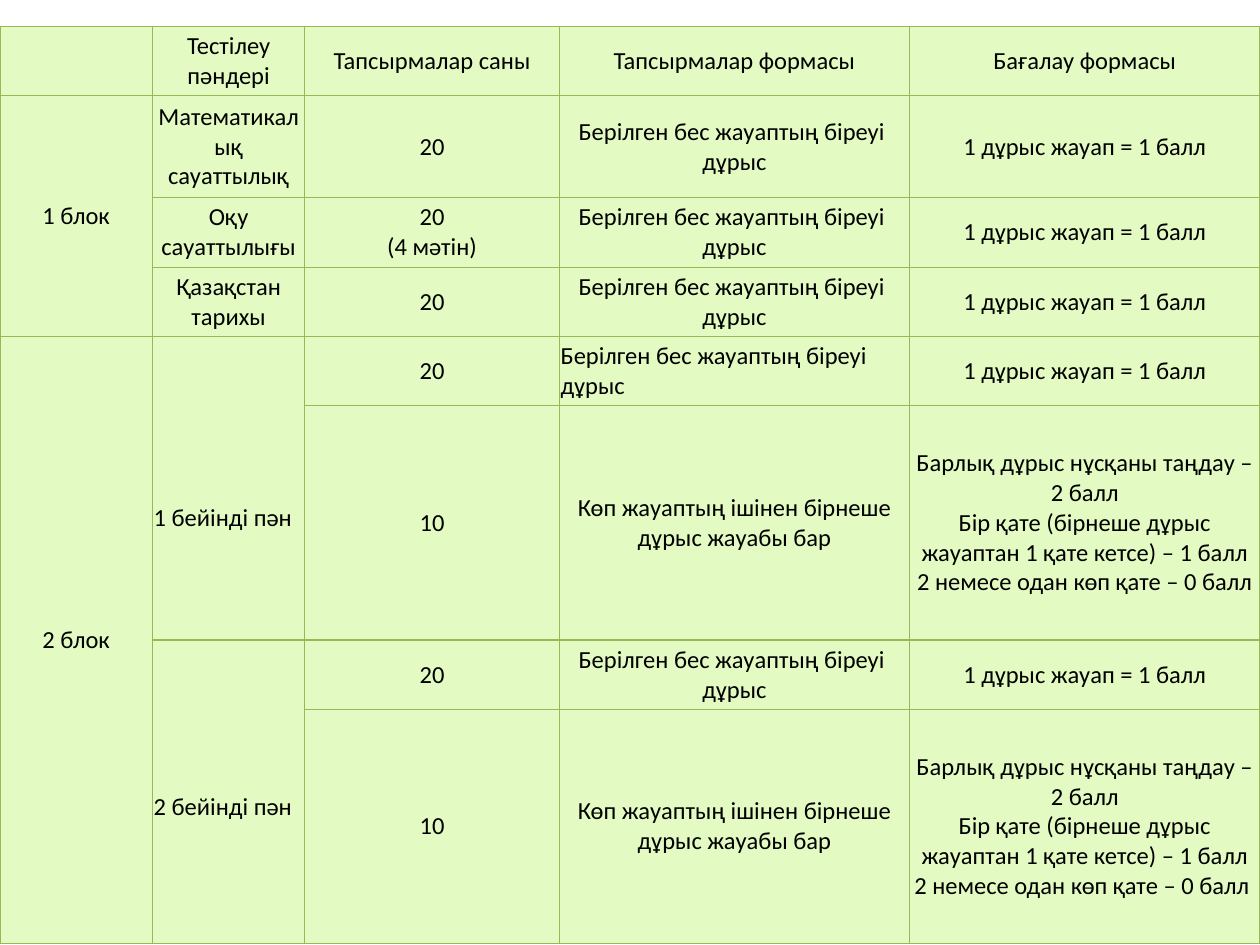
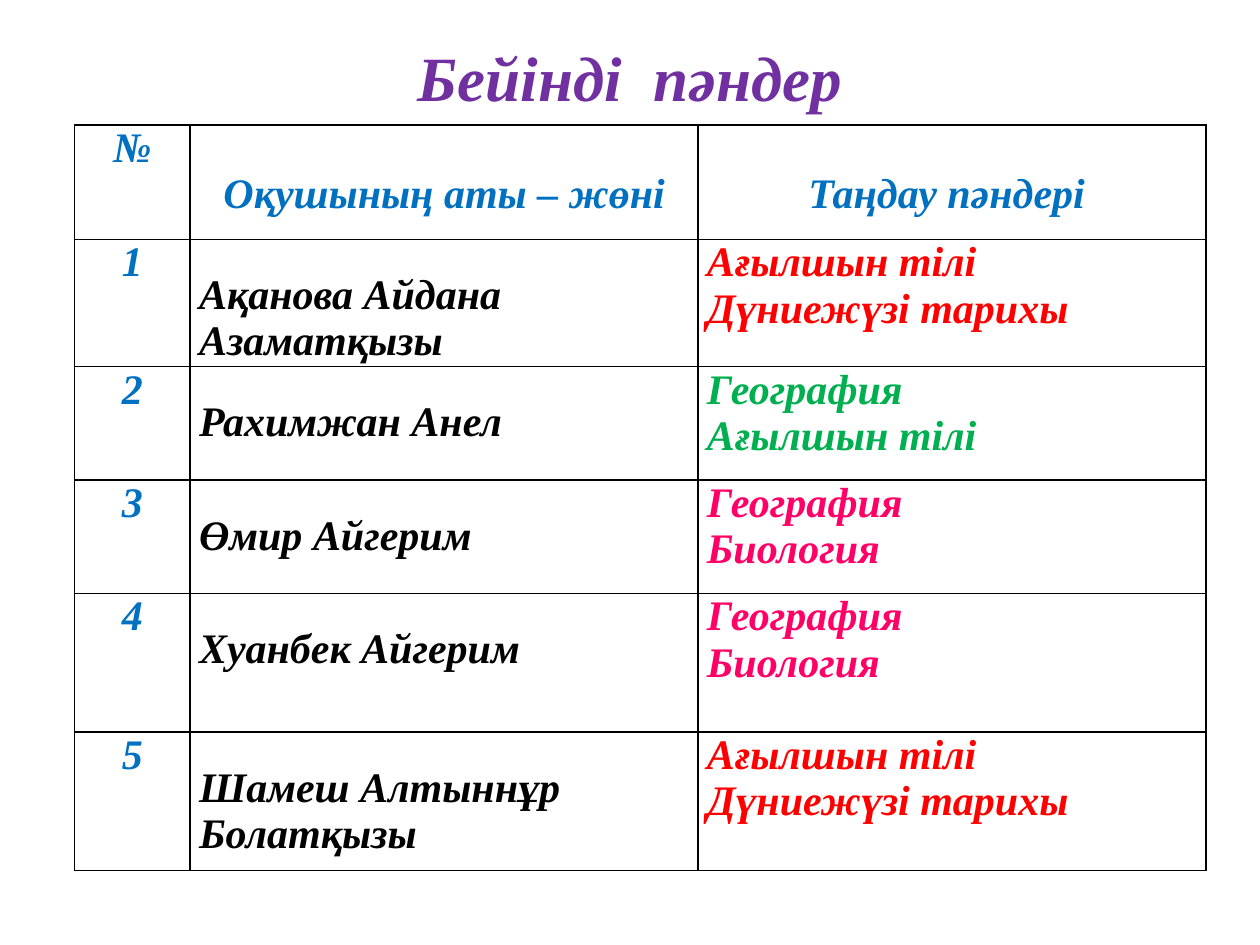
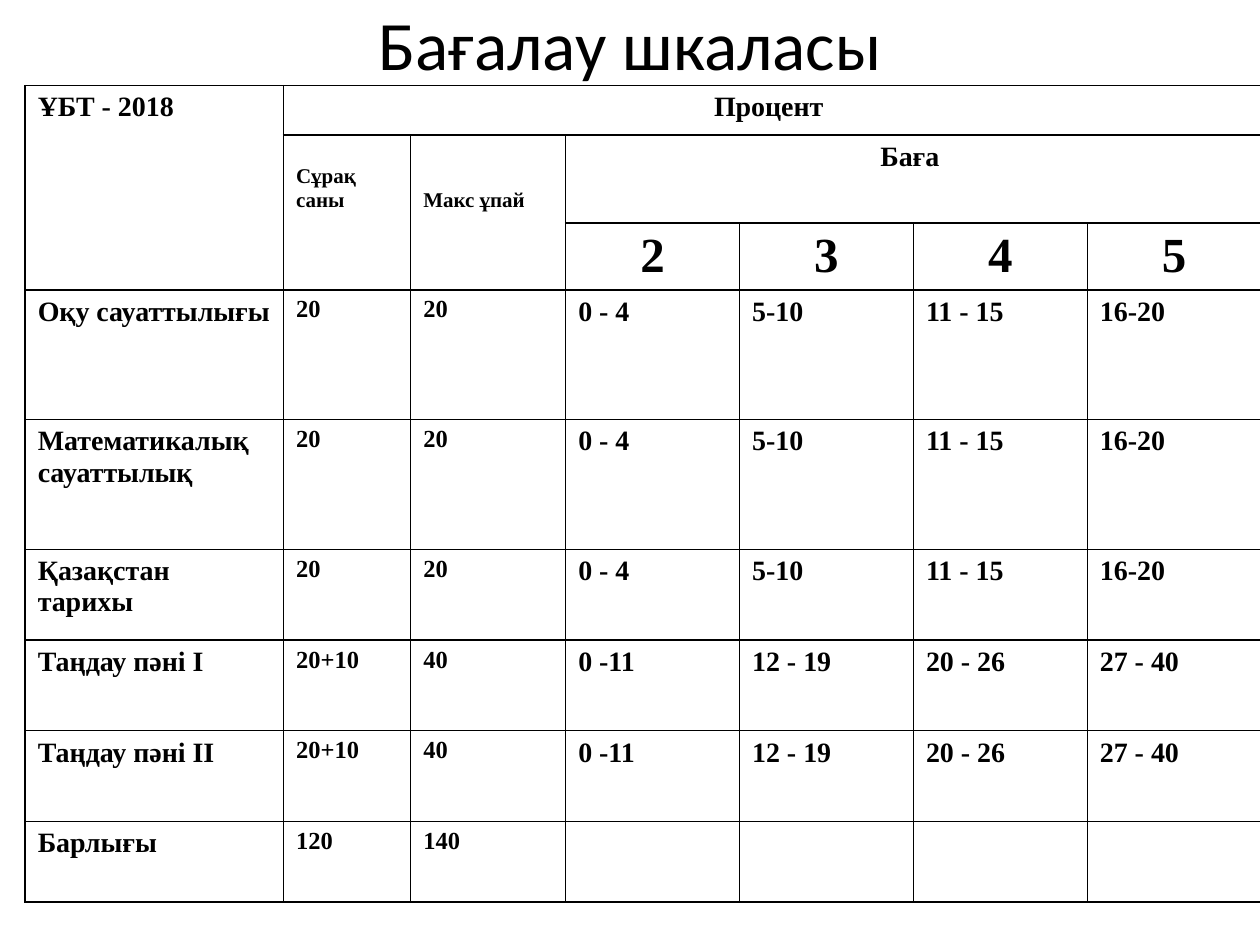
from dataclasses import dataclass, replace

from lxml.etree import SubElement
from pptx import Presentation
from pptx.dml.color import RGBColor
from pptx.enum.text import MSO_ANCHOR, MSO_AUTO_SIZE, PP_ALIGN
from pptx.oxml.ns import qn
from pptx.slide import Slide
from pptx.table import _Cell
from pptx.text.text import TextFrame
from pptx.util import Inches, Pt

HUES = {
    "black": "000000", "blue": "0070C0", "violet": "7030A0", "red": "FF0000",
    "green": "00B050", "pink": "FF0066", "lime": "E3FBC2", "olive": "98B955",
}


@dataclass(frozen=True)
class Look:
    font: str
    size: float
    hue: str = "black"
    bold: bool = False
    slant: bool = False
    center: bool = False


@dataclass(frozen=True)
class Item:
    """Cell text, one paragraph a line; top replaces the top inset."""
    text: str
    look: Look
    span: tuple[int, int] = (1, 1)
    top: float | None = None


@dataclass(frozen=True)
class Grid:
    left: float
    top: float
    cols: list[float]
    rows: list[float]
    inset: tuple[float, float]
    line: str = "black"
    weight: float = 1
    fill: str | None = None
    anchor: MSO_ANCHOR = MSO_ANCHOR.TOP


Rows = list[list[Item | None]]


def write(frame: TextFrame, text: str, look: Look) -> None:
    for num, line in enumerate(text.split("\n")):
        para = frame.add_paragraph() if num else frame.paragraphs[0]
        para.alignment = PP_ALIGN.CENTER if look.center else PP_ALIGN.LEFT
        run = para.add_run()
        run.text = line
        font = run.font
        font.name, font.size = look.font, Pt(look.size)
        font.bold, font.italic = look.bold, look.slant
        font.color.rgb = RGBColor.from_string(HUES[look.hue])


def add_title(slide: Slide, text: str, top: float, height: float, look: Look) -> None:
    title = slide.shapes.title
    title.left, title.top = Inches(0.5), Inches(top)
    title.width, title.height = Inches(9), Inches(height)
    frame = title.text_frame
    frame.auto_size = MSO_AUTO_SIZE.NONE
    frame.vertical_anchor = MSO_ANCHOR.MIDDLE
    write(frame, text, look)


def format_cell(cell: _Cell, grid: Grid) -> None:
    """Set the fill, insets and four borders."""
    if grid.fill:
        cell.fill.solid()
        cell.fill.fore_color.rgb = RGBColor.from_string(HUES[grid.fill])
    else:
        cell.fill.background()
    side, edge = map(Inches, grid.inset)
    cell.margin_left = cell.margin_right = side
    cell.margin_top = cell.margin_bottom = edge
    cell.vertical_anchor = grid.anchor
    props = cell._tc.get_or_add_tcPr()
    for num, tag in enumerate(("a:lnL", "a:lnR", "a:lnT", "a:lnB")):
        line = SubElement(props, qn(tag), w=str(Pt(grid.weight)))
        solid = SubElement(line, qn("a:solidFill"))
        SubElement(solid, qn("a:srgbClr"), val=HUES[grid.line])
        props.insert(num, line)


def add_grid(slide: Slide, grid: Grid, rows: Rows) -> None:
    table = slide.shapes.add_table(
        len(grid.rows), len(grid.cols), Inches(grid.left), Inches(grid.top),
        Inches(sum(grid.cols)), Inches(sum(grid.rows))).table
    table.first_row = table.horz_banding = False
    for col, width in zip(table.columns, grid.cols):
        col.width = Inches(width)
    for row, height in zip(table.rows, grid.rows):
        row.height = Inches(height)
    for r, items in enumerate(rows):
        for c, item in enumerate(items):
            cell = table.cell(r, c)
            format_cell(cell, grid)
            if item is None:
                continue
            down, over = item.span
            if item.span != (1, 1):
                cell.merge(table.cell(r + down - 1, c + over - 1))
            if item.top is not None:
                cell.margin_top = Inches(item.top)
            write(cell.text_frame, item.text, item.look)


def build_blocks(slide: Slide) -> None:
    left = Look("Calibri", 14)
    mid = replace(left, center=True)
    one = "Берілген бес жауаптың біреуі  дұрыс"
    many = "Көп жауаптың ішінен бірнеше дұрыс жауабы бар"
    point = "1 дұрыс жауап = 1 балл"
    scale = ("Барлық дұрыс нұсқаны таңдау – 2 балл\n"
             "Бір қате (бірнеше дұрыс жауаптан 1 қате кетсе) – 1 балл\n"
             "2 немесе одан көп қате – 0 балл")

    def cells(*texts: str) -> list[Item]:
        return [Item(text, mid) for text in texts]

    rows: Rows = [
        [None, *cells("Тестілеу пәндері", "Тапсырмалар саны",
                      "Тапсырмалар формасы", "Бағалау формасы")],
        [Item("1 блок", mid, (3, 1)),
         *cells("Математикалық сауаттылық", "20", one, point)],
        [None, *cells("Оқу сауаттылығы", "20\n(4 мәтін)", one, point)],
        [None, *cells("Қазақстан тарихы", "20", one, point)],
        [Item("2 блок", mid, (4, 1)), Item("1 бейінді пән", left, (2, 1), 0.48),
         Item("20", mid), Item(one, left), Item(point, mid)],
        [None, None, *cells("10", many, scale)],
        [None, Item("2 бейінді пән", left, (2, 1), 0.25), *cells("20", one, point)],
        [None, None, *cells("10", many, scale + " ")],
    ]
    grid = Grid(0, 0.21, [1.21, 1.21, 2.02, 2.78, 2.78],
                [0.55, 0.81, 0.55, 0.55, 0.55, 1.86, 0.55, 1.86],
                (0.01, 0.01), "olive", 0.75, "lime", MSO_ANCHOR.MIDDLE)
    add_grid(slide, grid, rows)


def build_pupils(slide: Slide) -> None:
    name = Look("Times New Roman", 24, bold=True, slant=True)
    head = replace(name, hue="blue", center=True)
    add_title(slide, "Бейінді  пәндер", 0.3, 0.61,
              replace(head, size=36, hue="violet"))
    world = ("Ағылшын тілі\nДүниежүзі тарихы", "red")
    life = ("География\nБиология", "pink")
    pupils = [
        ("Ақанова Айдана Азаматқызы", world),
        ("Рахимжан Анел", ("География\nАғылшын тілі", "green")),
        ("Өмир Айгерим", life),
        ("Хуанбек Айгерим", life),
        ("Шамеш Алтыннұр Болатқызы", world),
    ]
    rows: Rows = [[Item("№", head), Item("Оқушының аты – жөні", head, top=0.37),
                   Item("Таңдау пәндері ", head, top=0.37)]]
    for num, (pupil, (themes, hue)) in enumerate(pupils, 1):
        rows.append([Item(str(num), head), Item(pupil, name, top=0.26),
                     Item(themes, replace(name, hue=hue))])
    grid = Grid(0.59, 0.99, [0.92, 4.03, 4.03],
                [0.91, 1.01, 0.9, 0.9, 1.1, 1.1], (0.07, 0))
    add_grid(slide, grid, rows)


def build_scale(slide: Slide) -> None:
    add_title(slide, "Бағалау шкаласы", 0, 0.68, Look("Calibri", 39.6, center=True))
    text = Look("Times New Roman", 16, bold=True)
    mid = replace(text, center=True)
    small, count = replace(text, size=12), replace(text, size=14)
    mark = replace(mid, size=28)
    low = ["0 - 4", "5-10", "11 - 15", "16-20"]
    high = ["0 -11", "12 - 19", "20 - 26", "27 - 40"]
    themes = [
        ("Оқу сауаттылығы", "20", "20", low),
        ("Математикалық сауаттылық", "20", "20", low),
        ("Қазақстан тарихы", "20", "20", low),
        ("Таңдау пәні І", "20+10", "40", high),
        ("Таңдау пәні ІІ", "20+10", "40", high),
        ("Барлығы", "120", "140", []),
    ]
    rows: Rows = [
        [Item("ҰБТ - 2018", text, (3, 1)), Item("Процент ", mid, (1, 6)), *[None] * 5],
        [None, Item("Сұрақ саны", small, (2, 1), 0.24),
         Item("Макс ұпай", small, (2, 1), 0.43), Item("Баға ", mid, (1, 4)), *[None] * 3],
        [*[None] * 3, *[Item(grade, mark) for grade in "2345"]],
    ]
    for theme, tasks, most, spans in themes:
        tail = [Item(span, text) for span in spans] or [None] * 4
        rows.append([Item(theme, text), Item(tasks, count), Item(most, count), *tail])
    grid = Grid(0.2, 0.68, [2.05, 1.01, 1.23, *[1.38] * 4],
                [0.39, 0.7, 0.52, 1.03, 1.03, 0.72, 0.72, 0.72, 0.64], (0.1, 0.05))
    add_grid(slide, grid, rows)


def main() -> None:
    deck = Presentation()
    deck.slide_width, deck.slide_height = Inches(10), Inches(7.5)
    titled, blank = deck.slide_layouts[5], deck.slide_layouts[6]
    for layout, build in ((blank, build_blocks), (titled, build_pupils),
                          (titled, build_scale)):
        build(deck.slides.add_slide(layout))
    deck.save("out.pptx")


if __name__ == "__main__":
    main()
